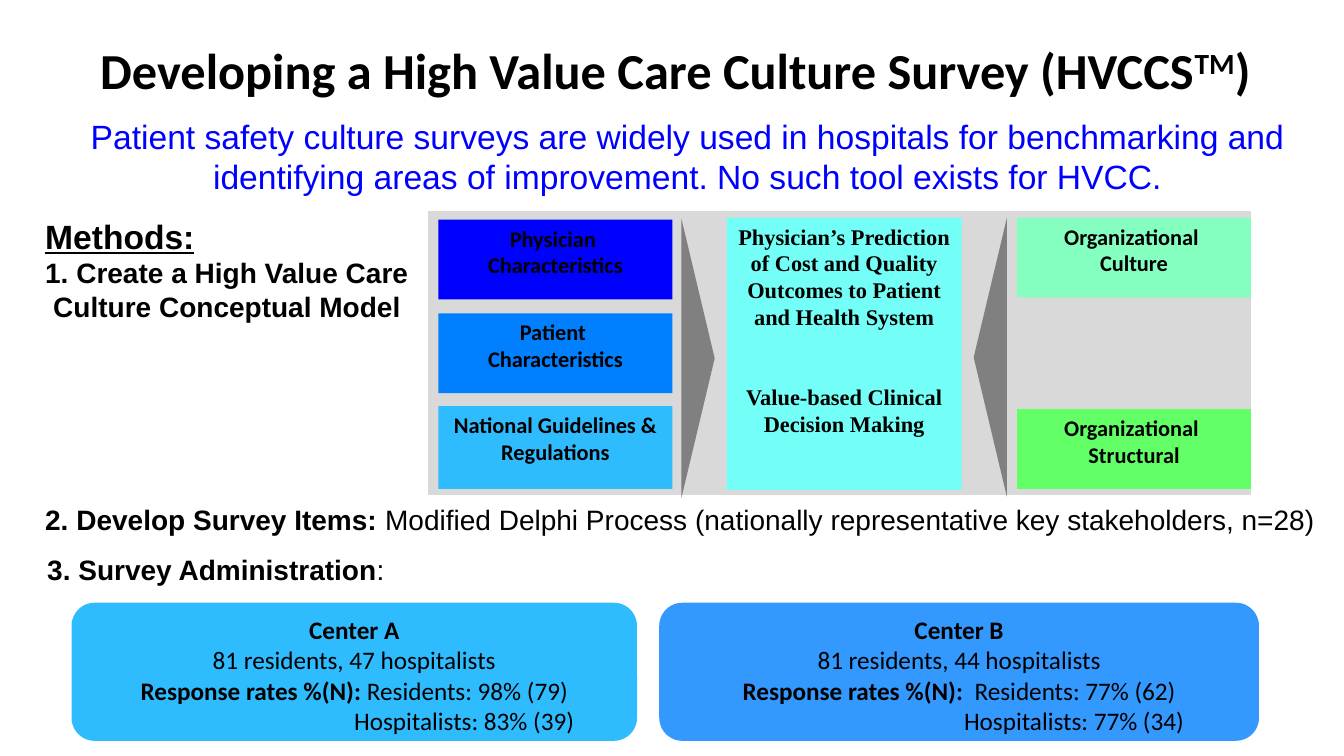
from pptx import Presentation
from pptx.dml.color import RGBColor
from pptx.enum.shapes import MSO_SHAPE
from pptx.enum.text import MSO_ANCHOR, PP_ALIGN
from pptx.util import Pt

PX = 9144
BLACK = RGBColor(0, 0, 0)
BLUE = RGBColor(0, 0, 255)
AZURE = RGBColor(0, 128, 255)
SKY = RGBColor(0x2F, 0xBC, 0xFF)
OCEAN = RGBColor(0x33, 0x99, 0xFF)
CYAN = RGBColor(0x73, 0xFF, 0xF7)
MINT = RGBColor(0x85, 0xFF, 0xC0)
GREEN = RGBColor(0x63, 0xFF, 0x66)
PALE = RGBColor(0xD9, 0xD9, 0xD9)
GRAY = RGBColor(0x80, 0x80, 0x80)

deck = Presentation()
deck.slide_width, deck.slide_height = 1333 * PX + 3048, 750 * PX
slide = deck.slides.add_slide(deck.slide_layouts[5])
shapes = slide.shapes


def write(shape, font, size, lines, align=PP_ALIGN.CENTER, color=BLACK):
    frame = shape.text_frame
    frame.word_wrap = True
    frame.vertical_anchor = MSO_ANCHOR.TOP
    for i, line in enumerate(lines):
        para = frame.paragraphs[0] if i == 0 else frame.add_paragraph()
        para.alignment = align
        for text, bold in line:
            run = para.add_run()
            run.text = text
            run.font.name = font
            run.font.size = Pt(size)
            run.font.bold = bold
            run.font.color.rgb = color
    return frame.paragraphs


def block(kind, box, fill):
    shape = shapes.add_shape(kind, *[n * PX for n in box])
    shape.shadow.inherit = False
    shape.fill.solid()
    shape.fill.fore_color.rgb = fill
    shape.line.fill.background()
    return shape


title = shapes.title
title.left, title.top, title.width, title.height = [n * PX for n in (60, 34, 1220, 71)]
paras = write(title, "Calibri", 36, [
    [("Developing a High Value Care Culture Survey (HVCCS", True), ("TM", True), (")", True)],
])
paras[0].runs[1].font._element.set("baseline", "30000")

intro = shapes.add_textbox(*[n * PX for n in (37, 110, 1290, 91)])
write(intro, "Arial", 24, [[(
    "Patient safety culture surveys are widely used in hospitals for benchmarking and "
    "identifying areas of improvement. No such tool exists for HVCC.", False)]], color=BLUE)

steps = [
    ((35, 209, 403, 118), [
        [("Methods:", True)],
        [("1. Create a High Value Care", True)],
        [("Culture Conceptual Model", True)],
    ]),
    ((35, 494, 1286, 77), [[
        ("2. Develop Survey Items: ", True),
        ("Modified Delphi Process (nationally representative key stakeholders, n=28)", False),
    ]]),
    ((37, 543, 1060, 44), [[("3. Survey Administration", True), (":", False)]]),
]
for box, lines in steps:
    step = shapes.add_textbox(*[n * PX for n in box])
    paras = write(step, "Arial", 20, lines, PP_ALIGN.LEFT)
    if len(paras) == 3:
        paras[0].runs[0].font.size = Pt(24)
        paras[0].runs[0].font.underline = True
        paras[2]._p.get_or_add_pPr().set("marL", str(8 * PX))

centers = [
    ("A", 71, 561, SKY, 47, "98% (79)", "83% (39)", " ", 218),
    ("B", 654, 595, OCEAN, 44, "77% (62)", "77% (34)", "  ", 228),
]
for name, left, width, fill, count, first, second, gap, indent in centers:
    card = block(MSO_SHAPE.ROUNDED_RECTANGLE, (left, 598, width, 137), fill)
    paras = write(card, "Calibri", 18, [
        [(f"Center {name}", True)],
        [(f"81 residents, {count} hospitalists", False)],
        [(f"Response rates %(N):{gap}", True), (f"Residents: {first}", False)],
        [(f"Hospitalists: {second}", False)],
    ])
    paras[3]._p.get_or_add_pPr().set("marL", str(indent * PX))

panel = block(MSO_SHAPE.RECTANGLE, (425, 210, 816, 281), PALE)
panel.line.color.rgb = PALE
panel.line.width = Pt(0.75)

factors = [
    (435, 218, 79, BLUE, ["Physician ", "Characteristics"]),
    (435, 311, 79, AZURE, ["Patient ", "Characteristics"]),
    (435, 403, 82, SKY, ["National Guidelines & Regulations"]),
    (1009, 216, 79, MINT, ["Organizational ", "Culture"]),
    (1009, 406, 79, GREEN, ["Organizational ", "Structural"]),
]
for left, top, height, fill, lines in factors:
    factor = block(MSO_SHAPE.RECTANGLE, (left, top, 232, height), fill)
    write(factor, "Calibri", 16, [[(line, True)] for line in lines])

core = block(MSO_SHAPE.RECTANGLE, (721, 216, 233, 270), CYAN)
paras = write(core, "Times New Roman", 16, [
    [("Physician’s Prediction of Cost and Quality Outcomes to Patient and Health System", True)],
    [("Value-based Clinical Decision Making", True)],
])
paras[1].space_before = Pt(38)

for left, top, turn in [(844, 338, 270), (554, 339, 90)]:
    wedge = block(MSO_SHAPE.ISOSCELES_TRIANGLE, (left, top, 277, 33), GRAY)
    wedge.rotation = turn

deck.save("out.pptx")
